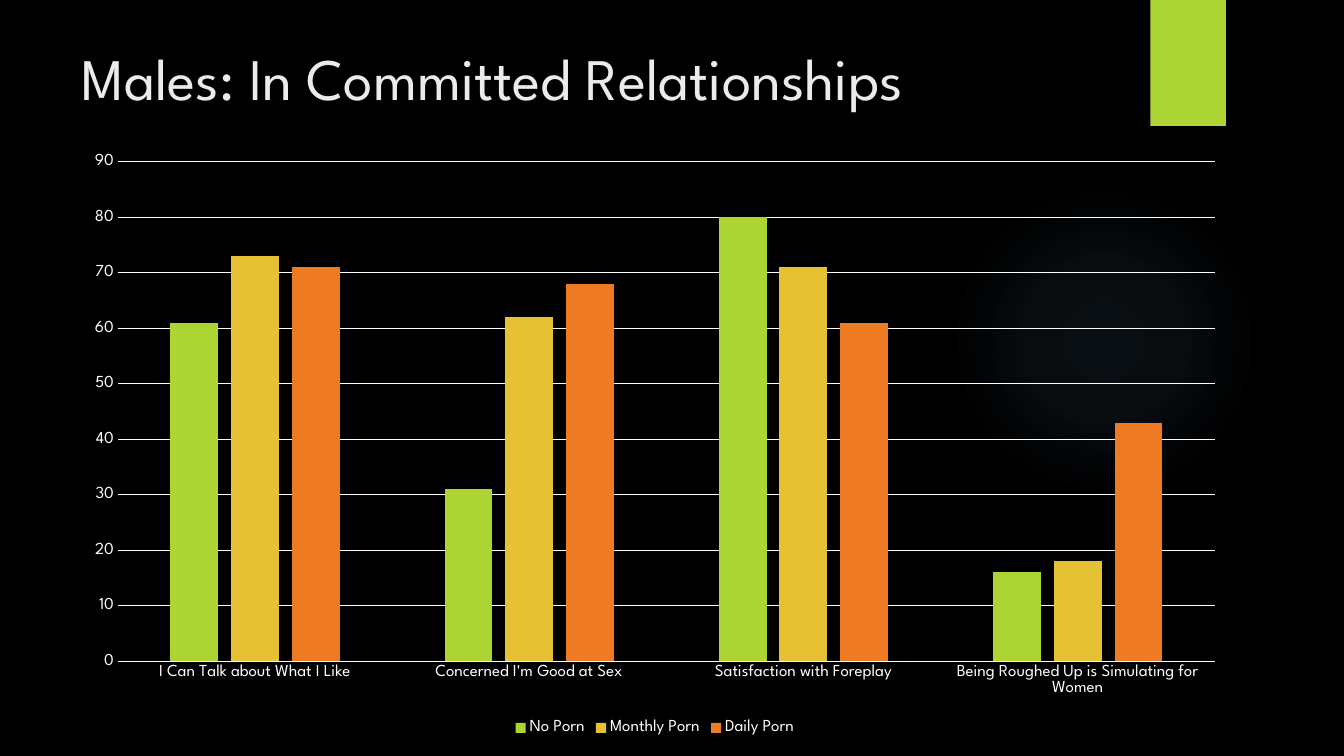
from typing import NamedTuple

import lxml.etree
import pptx
import pptx.chart.data
import pptx.dml.color
import pptx.enum.chart
import pptx.enum.shapes
import pptx.enum.text
import pptx.oxml
import pptx.oxml.ns
import pptx.util

Inches = pptx.util.Inches
Pt = pptx.util.Pt
RGBColor = pptx.dml.color.RGBColor
MSO_SHAPE = pptx.enum.shapes.MSO_SHAPE

FONT = "League Spartan"
BLACK = RGBColor(0x00, 0x00, 0x00)
WHITE = RGBColor(0xFF, 0xFF, 0xFF)
OFF_WHITE = RGBColor(0xEB, 0xEB, 0xEB)
GREEN = RGBColor(0xAC, 0xD4, 0x33)
YELLOW = RGBColor(0xE6, 0xC1, 0x33)
ORANGE = RGBColor(0xEF, 0x7A, 0x24)
GLOW_BLUE = RGBColor(0x7A, 0xC4, 0xF0)
GLOW_STOPS = ((0, 7), (36, 6), (69, 0))


class Box(NamedTuple):
    left: float
    top: float
    width: float
    height: float

    def lengths(self):
        return [Inches(v) for v in self]


class Group(NamedTuple):
    name: str
    values: tuple[int, ...]
    color: RGBColor


GLOW = Box(9.41, 1.83, 3.08, 3.08)
TAB = Box(11.41, 0, 0.75, 1.25)
TITLE = Box(0.71, 0.34, 10.29, 0.85)
CHART = Box(0.71, 1.41, 11.57, 5.93)

CATEGORIES = (
    "I Can Talk about What I Like",
    "Concerned I'm Good at Sex",
    "Satisfaction with Foreplay",
    "Being Roughed Up is Simulating for Women",
)
GROUPS = (
    Group("No Porn", (61, 31, 80, 16), GREEN),
    Group("Monthly Porn", (73, 62, 71, 18), YELLOW),
    Group("Daily Porn", (71, 68, 61, 43), ORANGE),
)


def style_font(font, size: float, color: RGBColor) -> None:
    font.name = FONT
    font.size = Pt(size)
    font.bold = False
    font.color.rgb = color


def style_line(line, color: RGBColor) -> None:
    line.color.rgb = color
    line.width = Pt(0.75)


def add_panel(slide, kind: MSO_SHAPE, box: Box, color: RGBColor):
    sp = slide.shapes.add_shape(kind, *box.lengths())
    sp.shadow.inherit = False
    sp.fill.solid()
    sp.fill.fore_color.rgb = color
    sp.line.fill.background()
    return sp


def add_glow(slide) -> None:
    sp = add_panel(slide, MSO_SHAPE.OVAL, GLOW, GLOW_BLUE)
    stops = "".join(
        f'<a:gs pos="{pos * 1000}"><a:srgbClr val="{GLOW_BLUE}">'
        f'<a:alpha val="{alpha * 1000}"/></a:srgbClr></a:gs>'
        for pos, alpha in GLOW_STOPS
    )
    grad = pptx.oxml.parse_xml(
        f'<a:gradFill {pptx.oxml.ns.nsdecls("a")}><a:gsLst>{stops}</a:gsLst>'
        '<a:path path="circle">'
        '<a:fillToRect l="50000" t="50000" r="50000" b="50000"/>'
        "</a:path></a:gradFill>"
    )
    sp_pr = sp.element.spPr
    sp_pr.replace(sp_pr.find(pptx.oxml.ns.qn("a:solidFill")), grad)


def add_tab(slide) -> None:
    sp = add_panel(slide, MSO_SHAPE.RECTANGLE, TAB, GREEN)
    effects = sp.element.spPr.find(pptx.oxml.ns.qn("a:effectLst"))
    shadow = lxml.etree.SubElement(
        effects, pptx.oxml.ns.qn("a:outerShdw"),
        blurRad=str(Pt(3)), dist=str(Pt(2)), dir=str(90 * 60000), rotWithShape="0",
    )
    color = lxml.etree.SubElement(shadow, pptx.oxml.ns.qn("a:srgbClr"), val=str(BLACK))
    lxml.etree.SubElement(color, pptx.oxml.ns.qn("a:alpha"), val="45000")


def add_title(slide, text: str) -> None:
    sp = slide.shapes.title
    sp.left, sp.top, sp.width, sp.height = TITLE.lengths()
    tf = sp.text_frame
    tf.word_wrap = True
    tf.auto_size = pptx.enum.text.MSO_AUTO_SIZE.NONE
    tf.vertical_anchor = pptx.enum.text.MSO_ANCHOR.MIDDLE
    p = tf.paragraphs[0]
    p.alignment = pptx.enum.text.PP_ALIGN.LEFT
    r = p.add_run()
    r.text = text
    style_font(r.font, 42, OFF_WHITE)


def add_bars(slide) -> None:
    data = pptx.chart.data.CategoryChartData()
    data.categories = CATEGORIES
    for group in GROUPS:
        data.add_series(group.name, group.values)
    chart = slide.shapes.add_chart(
        pptx.enum.chart.XL_CHART_TYPE.COLUMN_CLUSTERED, *CHART.lengths(), data
    ).chart
    style_font(chart.font, 10, WHITE)
    chart.has_title = False
    chart.has_legend = True
    chart.legend.position = pptx.enum.chart.XL_LEGEND_POSITION.BOTTOM
    chart.legend.include_in_layout = False
    style_font(chart.legend.font, 12, WHITE)

    plot = chart.plots[0]
    plot.gap_width = 219
    plot.overlap = -27
    plot.vary_by_categories = False
    for series, group in zip(plot.series, GROUPS):
        series.format.fill.solid()
        series.format.fill.fore_color.rgb = group.color
        series.invert_if_negative = False

    for axis in (chart.category_axis, chart.value_axis):
        axis.major_tick_mark = pptx.enum.chart.XL_TICK_MARK.NONE
        axis.minor_tick_mark = pptx.enum.chart.XL_TICK_MARK.NONE
        style_font(axis.tick_labels.font, 12, WHITE)
    style_line(chart.category_axis.format.line, WHITE)
    values = chart.value_axis
    values.format.line.fill.background()
    values.minimum_scale = 0
    values.maximum_scale = 90
    values.major_unit = 10
    style_line(values.major_gridlines.format.line, WHITE)


def main() -> None:
    prs = pptx.Presentation()
    prs.slide_width = Inches(13.33)
    prs.slide_height = Inches(7.5)
    s = prs.slides.add_slide(prs.slide_layouts[5])
    s.background.fill.solid()
    s.background.fill.fore_color.rgb = BLACK
    add_glow(s)
    add_tab(s)
    add_title(s, "Males: In Committed Relationships")
    add_bars(s)
    prs.save("out.pptx")


if __name__ == "__main__":
    main()
